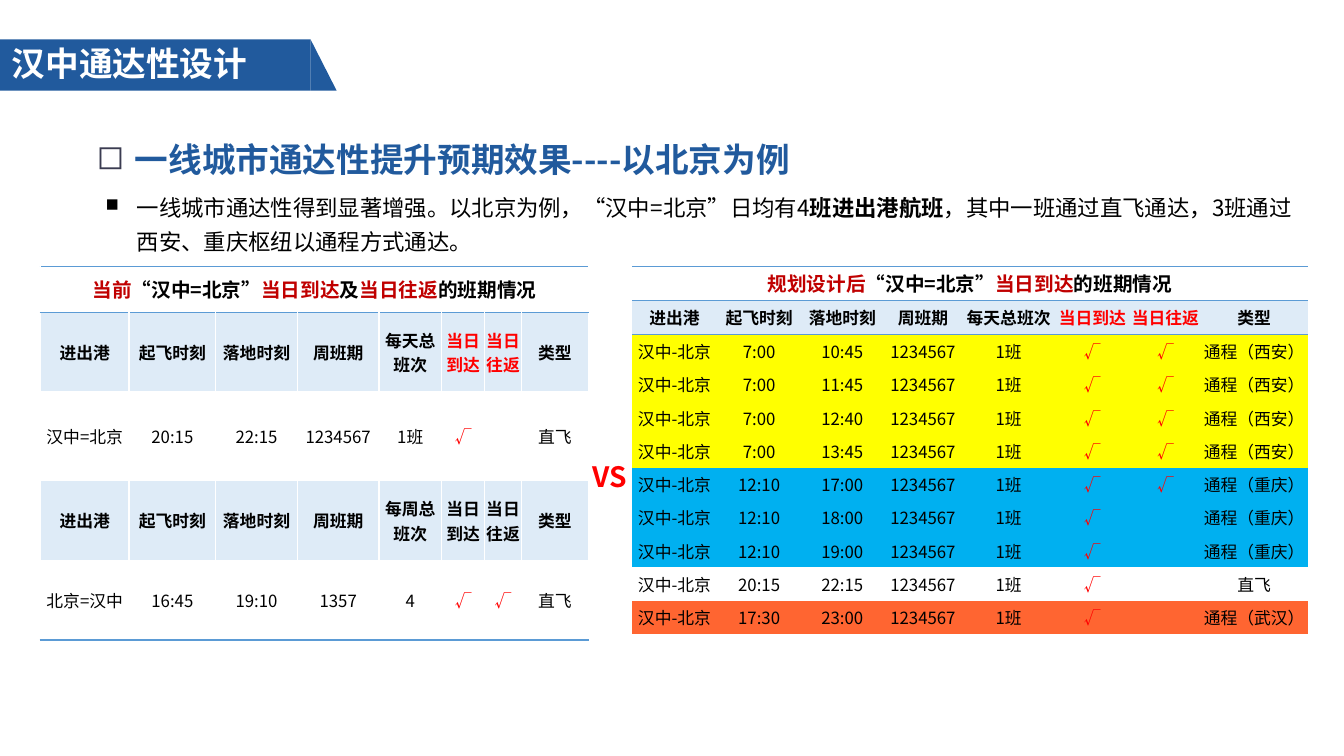
import enum

import lxml.etree
import pptx
import pptx.dml.color
import pptx.enum.shapes
import pptx.enum.text
import pptx.oxml.ns
import pptx.util

Inches, Pt = pptx.util.Inches, pptx.util.Pt
Align, Anchor = pptx.enum.text.PP_ALIGN, pptx.enum.text.MSO_ANCHOR
Shape = pptx.enum.shapes.MSO_SHAPE
qn = pptx.oxml.ns.qn


class Theme:
    FONT = "Noto Sans CJK SC"
    BLUE, BULLET, BLACK, WHITE = "215A9D", "3B3C51", "000000", "FFFFFF"
    RED, DARK_RED = "FF0000", "C00000"
    RULE, HEADER = "5B9BD5", "DEEBF7"
    YELLOW, CYAN, ORANGE = "FFFF00", "00B0F0", "FF6531"
    HEADING, VERSUS, BODY, CAPTION, CELL = Pt(24), Pt(20), Pt(16), Pt(14), Pt(12)
    NO_TABLE_STYLE = "{2D5ABB26-0587-4C30-8999-92F81FD0307C}"


class Column(enum.IntEnum):
    ARRIVE = 5
    RETURN = 6


TICK = "√"
CURRENT_ROUTE, PLANNED_ROUTE = "汉中=北京", "汉中-北京"
CAPTION_ROUTE = ("“汉中=北京”", Theme.BLACK)
ARRIVE, RETURN = "当日到达", "当日往返"


def header(total):
    return ["进出港", "起飞时刻", "落地时刻", "周班期", total, ARRIVE, RETURN, "类型"]


def set_all(target, values):
    for name, value in values.items():
        setattr(target, name, value)


def rgb(colour):
    return pptx.dml.color.RGBColor.from_string(colour)


def add_child(parent, tag, **attributes):
    return lxml.etree.SubElement(parent, qn(tag), attributes)


def add_span(para, text, size, colour, bold=False):
    span = para.add_run()
    span.text = text
    set_all(span.font, {"name": Theme.FONT, "size": size, "bold": bold})
    span.font.color.rgb = rgb(colour)
    add_child(span.font._element, "a:ea", typeface=Theme.FONT)


def add_bullet(para, character, indent, colour, percent):
    properties = para._p.get_or_add_pPr()
    properties.set("marL", str(Inches(indent)))
    properties.set("indent", str(-Inches(indent)))
    add_child(add_child(properties, "a:buClr"), "a:srgbClr", val=colour)
    add_child(properties, "a:buSzPct", val=str(percent * 1000))
    add_child(properties, "a:buChar", char=character)


def add_text(page, place, spans, size, bullet=None, anchor=Anchor.TOP, **layout):
    """Spans are (text, colour, bold); layout holds paragraph formats."""
    box = page.shapes.add_textbox(*map(Inches, place))
    set_all(box.text_frame, {"word_wrap": True, "vertical_anchor": anchor})
    para = box.text_frame.paragraphs[0]
    if bullet:
        add_bullet(para, *bullet)
    set_all(para, layout)
    for text, colour, bold in spans:
        add_span(para, text, size, colour, bold)


def add_banner(page, kind, place):
    shape = page.shapes.add_shape(kind, *map(Inches, place))
    shape.shadow.inherit = False
    shape.fill.solid()
    shape.fill.fore_color.rgb = rgb(Theme.BLUE)
    shape.line.fill.background()


def set_borders(cell, colours):
    """Colours are keyed by side; sides are written in schema order."""
    properties = cell._tc.get_or_add_tcPr()
    for side in "LRTB":
        if side in colours:
            line = add_child(properties, f"a:ln{side}", w=str(Pt(1)))
            add_child(add_child(line, "a:solidFill"), "a:srgbClr", val=colours[side])


def fill_cell(cell, spans, size, bold, fill, borders):
    margins = dict.fromkeys(("margin_left", "margin_right", "margin_top", "margin_bottom"), 0)
    set_all(cell, {**margins, "vertical_anchor": Anchor.MIDDLE})
    set_borders(cell, borders)
    if fill:
        cell.fill.solid()
        cell.fill.fore_color.rgb = rgb(fill)
    else:
        cell.fill.background()
    para = cell.text_frame.paragraphs[0]
    para.alignment = Align.CENTER
    for text, colour in spans:
        add_span(para, text, size, colour, bold)
    if not spans:
        add_child(para._p, "a:endParaRPr", sz=str(int(size.pt * 100)))


def cell_colour(text, column, accent):
    return Theme.RED if text == TICK or (accent and column in tuple(Column)) else Theme.BLACK


def add_timetable(page, left, widths, heights, caption, rows, caption_fill, grid, closing):
    """Rows are (texts, fill, bold, accent); grid colours every border, closing the last one."""
    top = Inches(2.64)
    frame = page.shapes.add_table(len(heights), len(widths), Inches(left), top,
                                  Inches(sum(widths)), Inches(sum(heights)))
    table = frame.table
    set_all(table, {"first_row": False, "horz_banding": False})
    table._tbl.tblPr.find(qn("a:tableStyleId")).text = Theme.NO_TABLE_STYLE
    for column, width in zip(table.columns, widths):
        column.width = Inches(width)
    for row, height in zip(table.rows, heights):
        row.height = Inches(height)

    base = dict.fromkeys("LRTB", grid) if grid else {}
    ruled = {**base, "T": Theme.RULE, "B": Theme.RULE}
    for column in range(len(widths)):
        fill_cell(table.cell(0, column), [] if column else caption,
                  Theme.CAPTION, True, caption_fill, ruled)
    table.cell(0, 0).merge(table.cell(0, len(widths) - 1))
    for number, (texts, fill, bold, accent) in enumerate(rows, 1):
        borders = dict(base)
        if number == 1:
            borders["T"] = Theme.RULE
        if closing and number == len(rows):
            borders["B"] = closing
        for column, text in enumerate(texts):
            spans = [(text, cell_colour(text, column, accent))] if text else []
            fill_cell(table.cell(number, column), spans, Theme.CELL, bold, fill, borders)


def add_current_timetable(page):
    caption = [("当前", Theme.DARK_RED), CAPTION_ROUTE, (ARRIVE, Theme.DARK_RED),
               ("及", Theme.BLACK), (RETURN, Theme.DARK_RED), ("的班期情况", Theme.BLACK)]
    rows = [
        (header("每天总班次"), Theme.HEADER, True, True),
        ([CURRENT_ROUTE, "20:15", "22:15", "1234567", "1班", TICK, "", "直飞"], None, False, False),
        (header("每周总班次"), Theme.HEADER, True, False),
        (["北京=汉中", "16:45", "19:10", "1357", "4", TICK, TICK, "直飞"], None, False, False),
    ]
    add_timetable(page, 0.4, [0.88, 0.86, 0.81, 0.81, 0.62, 0.43, 0.36, 0.67],
                  [0.46, 0.79, 0.88, 0.79, 0.79], caption, rows, None, Theme.WHITE, Theme.RULE)


def add_planned_timetable(page):
    caption = [("规划设计后", Theme.DARK_RED), CAPTION_ROUTE,
               (ARRIVE, Theme.DARK_RED), ("的班期情况", Theme.BLACK)]
    flights = [
        ("7:00", "10:45", TICK, "通程（西安）", Theme.YELLOW),
        ("7:00", "11:45", TICK, "通程（西安）", Theme.YELLOW),
        ("7:00", "12:40", TICK, "通程（西安）", Theme.YELLOW),
        ("7:00", "13:45", TICK, "通程（西安）", Theme.YELLOW),
        ("12:10", "17:00", TICK, "通程（重庆）", Theme.CYAN),
        ("12:10", "18:00", "", "通程（重庆）", Theme.CYAN),
        ("12:10", "19:00", "", "通程（重庆）", Theme.CYAN),
        ("20:15", "22:15", "", "直飞", Theme.WHITE),
        ("17:30", "23:00", "", "通程（武汉）", Theme.ORANGE),
    ]
    rows = [(header("每天总班次"), Theme.HEADER, True, True)]
    rows += [([PLANNED_ROUTE, start, end, "1234567", "1班", TICK, back, kind], fill, False, False)
             for start, end, back, kind, fill in flights]
    add_timetable(page, 6.27, [0.84, 0.84, 0.81, 0.79, 0.91, 0.75, 0.7, 1.06],
                  [0.34] * 2 + [0.33] * len(flights), caption, rows, Theme.WHITE, None, None)


def main():
    deck = pptx.Presentation()
    set_all(deck, {"slide_width": Inches(13.33), "slide_height": Inches(7.5)})
    page = deck.slides.add_slide(deck.slide_layouts[6])
    add_banner(page, Shape.RECTANGLE, (0, 0.39, 3.08, 0.51))
    add_banner(page, Shape.RIGHT_TRIANGLE, (3.08, 0.39, 0.26, 0.51))
    add_text(page, (0.86, 1.13, 11.62, 0.71),
             [("一线城市通达性提升预期效果----以北京为例", Theme.BLUE, True)], Theme.HEADING,
             bullet=("◻", 0.38, Theme.BULLET, 100),
             alignment=Align.JUSTIFY, line_spacing=1.5, space_after=Pt(6))
    add_text(page, (0.02, 0.38, 2.74, 0.5),
             [("汉中通达性设计", Theme.WHITE, True)], Theme.HEADING)
    add_text(page, (0.95, 1.81, 11.97, 0.77),
             [("一线城市通达性得到显著增强。以北京为例，“汉中=北京”日均有4", Theme.BLACK, False),
              ("班进出港航班", Theme.BLACK, True),
              ("，其中一班通过直飞通达，3班通过西安、重庆枢纽以通程方式通达。", Theme.BLACK, False)],
             Theme.BODY, bullet=("■", 0.31, Theme.BLACK, 80), line_spacing=1.25)
    add_planned_timetable(page)
    add_text(page, (5.64, 4.43, 0.82, 0.59), [("VS", Theme.RED, True)], Theme.VERSUS,
             anchor=Anchor.MIDDLE, alignment=Align.CENTER)
    add_current_timetable(page)
    deck.save("out.pptx")


if __name__ == "__main__":
    main()
